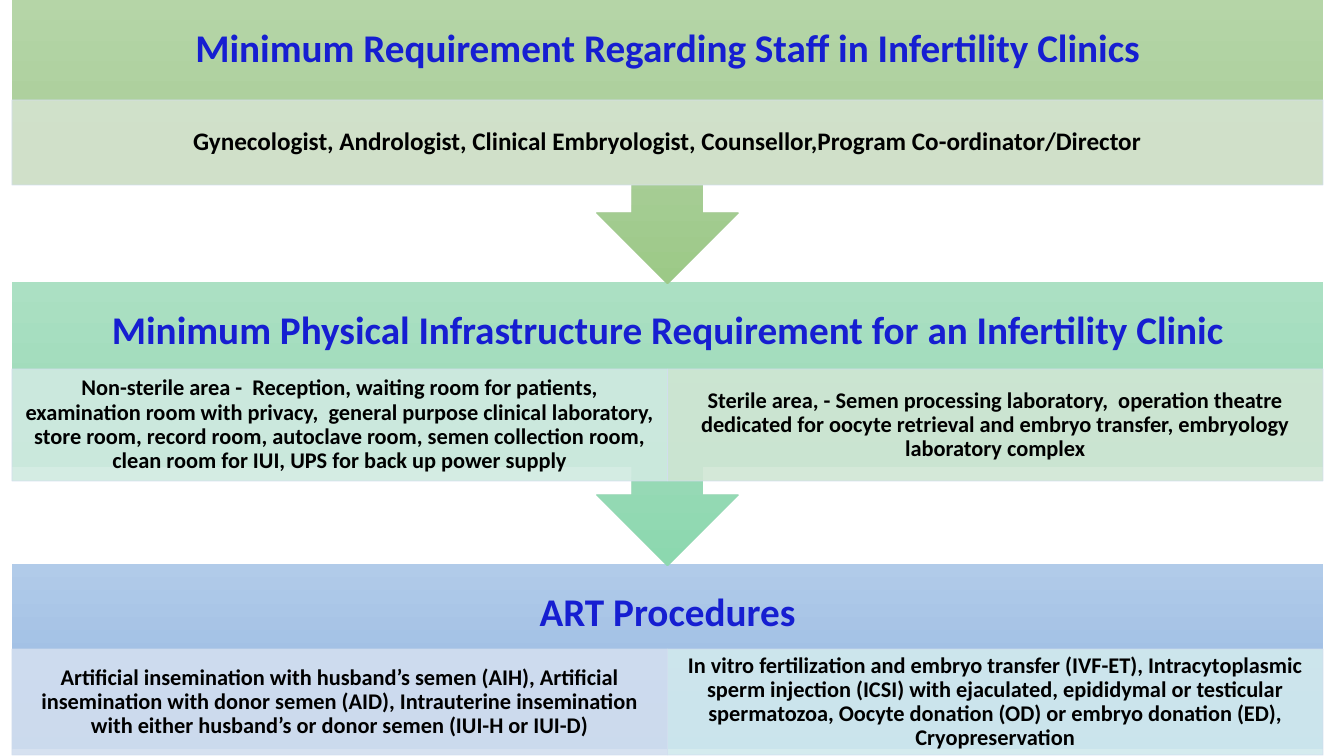
from copy import deepcopy

from pptx import Presentation
from pptx.dml.color import RGBColor
from pptx.enum.shapes import MSO_SHAPE
from pptx.enum.text import MSO_ANCHOR, PP_ALIGN
from pptx.oxml import parse_xml
from pptx.oxml.ns import nsdecls, qn
from pptx.util import Pt

PX = 914400 / 100.8
LEFT, WIDTH = 12, 1311
PITCH = 282
HEAD = 100

# title, stage shape, height, gradient, offset of cells, height of cells,
# text size, side and top insets, cells as (text, colour)
STAGES = [
    ("Minimum Requirement Regarding Staff in Infertility Clinics",
     MSO_SHAPE.DOWN_ARROW_CALLOUT, 284, ("B5D5A7", "AACE9A", "9CC987"),
     100, 85, 18, (14, 3),
     [("Gynecologist, Andrologist, Clinical Embryologist, "
       "Counsellor,Program Co-ordinator/Director", "D5E3CF")]),
    ("Minimum Physical Infrastructure Requirement for an Infertility Clinic",
     MSO_SHAPE.DOWN_ARROW_CALLOUT, 284, ("ABE0C3", "9DDAB9", "8CD8AF"),
     87, 112, 16, (12, 2),
     [("Non-sterile area -  Reception, waiting room for patients, "
       "examination room with privacy,  general purpose clinical laboratory, "
       "store room, record room, autoclave room, semen collection room, "
       "clean room for IUI, UPS for back up power supply", "D0EAE1"),
      ("Sterile area, - Semen processing laboratory,  operation theatre "
       "dedicated for oocyte retrieval and embryo transfer, embryology "
       "laboratory complex", "D0E6D4")]),
    ("ART Procedures",
     MSO_SHAPE.RECTANGLE, 185, ("B1CBE9", "A3C1E5", "93B9E4"),
     85, 106, 16, (12, 2),
     [("Artificial insemination with husband’s semen (AIH), Artificial "
       "insemination with donor semen (AID), Intrauterine insemination "
       "with either husband’s or donor semen (IUI-H or IUI-D)", "D2DEEF"),
      ("In vitro fertilization and embryo transfer (IVF-ET), "
       "Intracytoplasmic sperm injection (ICSI) with ejaculated, epididymal "
       "or testicular spermatozoa, Oocyte donation (OD) or embryo donation "
       "(ED), Cryopreservation", "D1E9ED")]),
]


def px(*sizes):
    return [round(size * PX) for size in sizes]


def paint(color, code):
    color.rgb = RGBColor.from_string(code)


def fade(fill, alpha):
    """Set the opacity, in percent, of a solid fill."""
    for color in fill.iter(qn("a:srgbClr")):
        color.append(parse_xml(
            f'<a:alpha {nsdecls("a")} val="{alpha * 1000}"/>'))


def blend(shape, codes):
    """Fill a shape with three even stops from top to bottom."""
    fill = shape.fill
    fill.gradient()
    fill.gradient_angle = 270
    stops = shape._element.spPr.find(".//" + qn("a:gsLst"))
    stops.insert(1, deepcopy(stops[0]))
    for stop, code, spot in zip(fill.gradient_stops, codes, (0, 0.5, 1)):
        paint(stop.color, code)
        stop.position = spot


def write(shape, text, size, code, inset):
    frame = shape.text_frame
    frame.word_wrap = True
    frame.vertical_anchor = MSO_ANCHOR.MIDDLE
    side, top = px(*inset)
    frame.margin_left = frame.margin_right = side
    frame.margin_top = frame.margin_bottom = top
    para = frame.paragraphs[0]
    para.text = text
    para.alignment = PP_ALIGN.CENTER
    para.line_spacing = 0.9
    para.font.name = "Calibri"
    para.font.size = Pt(size)
    para.font.bold = True
    paint(para.font.color, code)


def cell(slide, box, text, code, size, inset):
    shape = slide.shapes.add_shape(MSO_SHAPE.RECTANGLE, *px(*box))
    shape.shadow.inherit = False
    shape.fill.solid()
    paint(shape.fill.fore_color, code)
    paint(shape.line.color, "D2DEEF")
    shape.line.width = Pt(0.5)
    fade(shape._element.spPr, 90)
    write(shape, text, size, "000000", inset)


def stage(slide, box, title, kind, codes, drop, tall, size, inset, cells):
    left, top, width, _ = box
    back = slide.shapes.add_shape(kind, *px(*box))
    back.shadow.inherit = False
    back.line.fill.background()
    blend(back, codes)
    head = slide.shapes.add_textbox(*px(left, top, width, HEAD))
    write(head, title, 28, "161ED1", (22, 22))
    wide = width / len(cells)
    for col, (text, code) in enumerate(cells):
        area = (left + col * wide, top + drop, wide, tall)
        cell(slide, area, text, code, size, inset)


def main():
    deck = Presentation()
    deck.slide_width, deck.slide_height = px(1344, 756)
    slide = deck.slides.add_slide(deck.slide_layouts[6])
    for row, (title, kind, high, *rest) in reversed(list(enumerate(STAGES))):
        box = (LEFT, row * PITCH, WIDTH, high)
        stage(slide, box, title, kind, *rest)
    deck.save("out.pptx")


if __name__ == "__main__":
    main()
